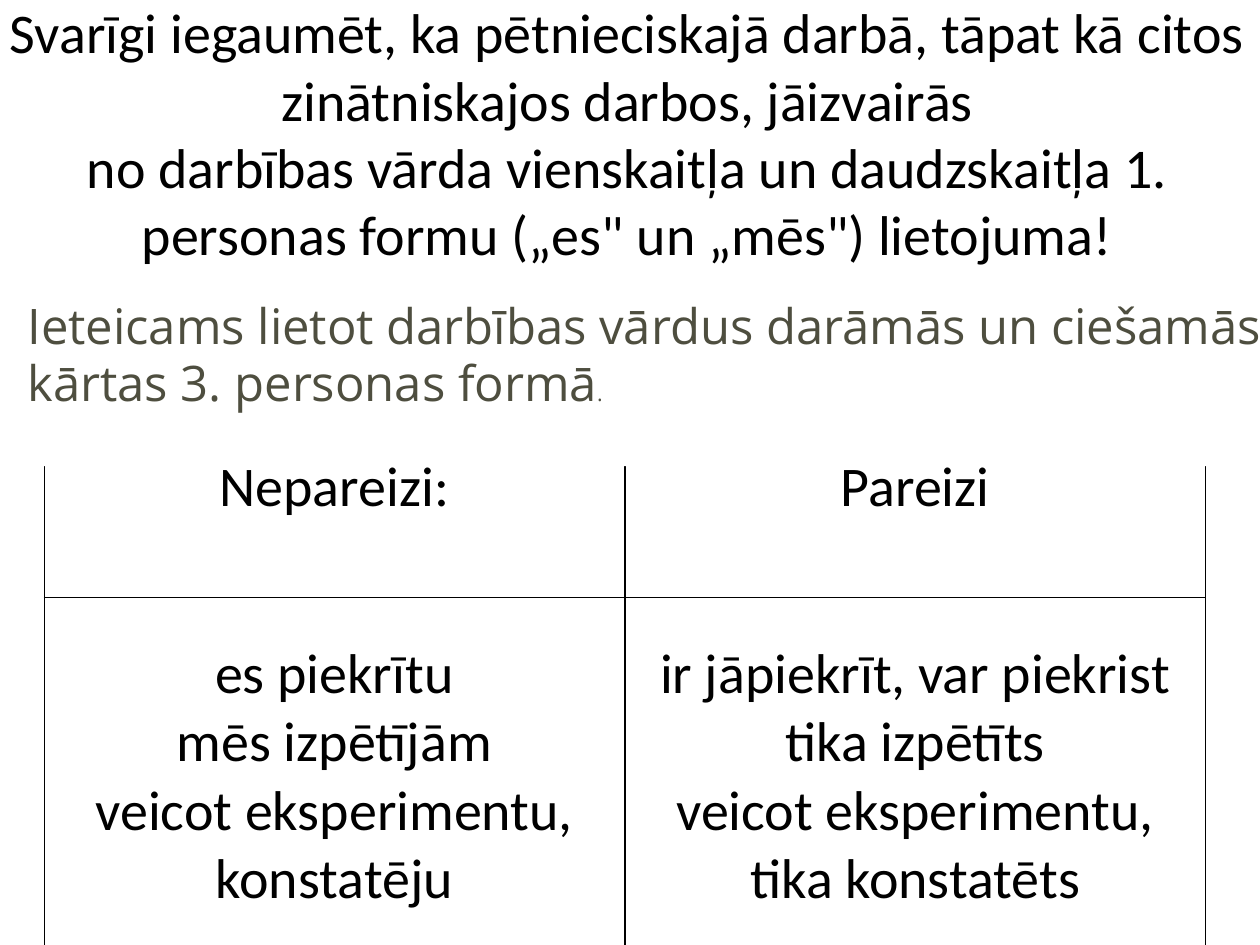
from lxml.etree import SubElement
from pptx import Presentation
from pptx.dml.color import RGBColor
from pptx.enum.shapes import MSO_SHAPE
from pptx.enum.text import MSO_ANCHOR, MSO_AUTO_SIZE, PP_ALIGN
from pptx.oxml.ns import qn
from pptx.util import Inches, Pt

BLACK, WHITE, OLIVE = "000000", "FFFFFF", "4E4E3F"

TITLE = [
    "Svarīgi iegaumēt, ka pētnieciskajā darbā, tāpat kā citos zinātniskajos darbos, jāizvairās",
    "no darbības vārda vienskaitļa un daudzskaitļa 1. personas formu („es\" un „mēs\") lietojuma!",
]
ADVICE = [
    [("Ieteicams lietot darbības vārdus darāmās un ciešamās", 28)],
    [("kārtas 3. personas formā", 28), (".", 12)],
]
EXAMPLES = [
    [["Nepareizi:"], ["Pareizi"]],
    [["es piekrītu", "mēs izpētījām", "veicot eksperimentu, konstatēju"],
     ["ir jāpiekrīt, var piekrist", "tika izpētīts", "veicot eksperimentu, tika konstatēts"]],
]


def rgb(color):
    return RGBColor.from_string(color)


def add_run(p, text, size, font="Calibri", color=BLACK):
    r = p.add_run()
    r.text = text
    r.font.size = Pt(size)
    r.font.name = font
    r.font.color.rgb = rgb(color)


def add_centred_lines(tf, lines):
    p = tf.paragraphs[0]
    p.alignment = PP_ALIGN.CENTER
    for i, line in enumerate(lines):
        if i:
            p.add_line_break()
        add_run(p, line, 32)


def add_title(s):
    sp = s.shapes.title
    sp.left, sp.top = Inches(-0.12), Inches(0.69)
    sp.width, sp.height = Inches(10.2), Inches(1.25)
    tf = sp.text_frame
    tf.word_wrap = True
    tf.auto_size = MSO_AUTO_SIZE.NONE
    tf.vertical_anchor = MSO_ANCHOR.MIDDLE
    tf.margin_bottom = Inches(0.58)  # lifts the text above the advice
    add_centred_lines(tf, TITLE)


def set_borders(cell):
    tc_pr = cell._tc.get_or_add_tcPr()
    for i, side in enumerate(("lnL", "lnR", "lnT", "lnB")):
        ln = tc_pr.makeelement(qn(f"a:{side}"), {"w": str(Pt(0.75))})
        fill = SubElement(ln, qn("a:solidFill"))
        SubElement(fill, qn("a:srgbClr"), val=BLACK)
        tc_pr.insert(i, ln)  # borders come before the fill


def add_examples(s):
    table = s.shapes.add_table(2, 2, Inches(0.35), Inches(3),
                               Inches(9.22), Inches(4.59)).table
    table.first_row = table.horz_banding = False
    for row, height, texts in zip(table.rows, (1.74, 2.85), EXAMPLES):
        row.height = Inches(height)
        for cell, lines in zip(row.cells, texts):
            cell.fill.background()
            cell.vertical_anchor = MSO_ANCHOR.MIDDLE
            cell.margin_left = cell.margin_right = Inches(0.05)
            cell.margin_top = cell.margin_bottom = Inches(0.05)
            add_centred_lines(cell.text_frame, lines)
            set_borders(cell)


def add_advice(s):
    sp = s.shapes.add_shape(MSO_SHAPE.RECTANGLE, Inches(0.12), Inches(2.25),
                            Inches(15.65), Inches(1.45))
    sp.shadow.inherit = False
    sp.fill.solid()
    sp.fill.fore_color.rgb = rgb(WHITE)
    sp.line.fill.background()
    tf = sp.text_frame
    tf.word_wrap = True
    tf.vertical_anchor = MSO_ANCHOR.TOP
    tf.margin_top = Inches(0.1)
    for i, runs in enumerate(ADVICE):
        p = tf.add_paragraph() if i else tf.paragraphs[0]
        p.alignment = PP_ALIGN.LEFT
        p.line_spacing = Pt(33)
        for text, size in runs:
            add_run(p, text, size, "Open Sans", OLIVE)


def main():
    prs = Presentation()
    prs.slide_width, prs.slide_height = Inches(10), Inches(7.5)
    s = prs.slides.add_slide(prs.slide_layouts[5])
    add_title(s)
    add_examples(s)
    add_advice(s)  # covers the top edge of the table
    prs.save("out.pptx")


if __name__ == "__main__":
    main()
